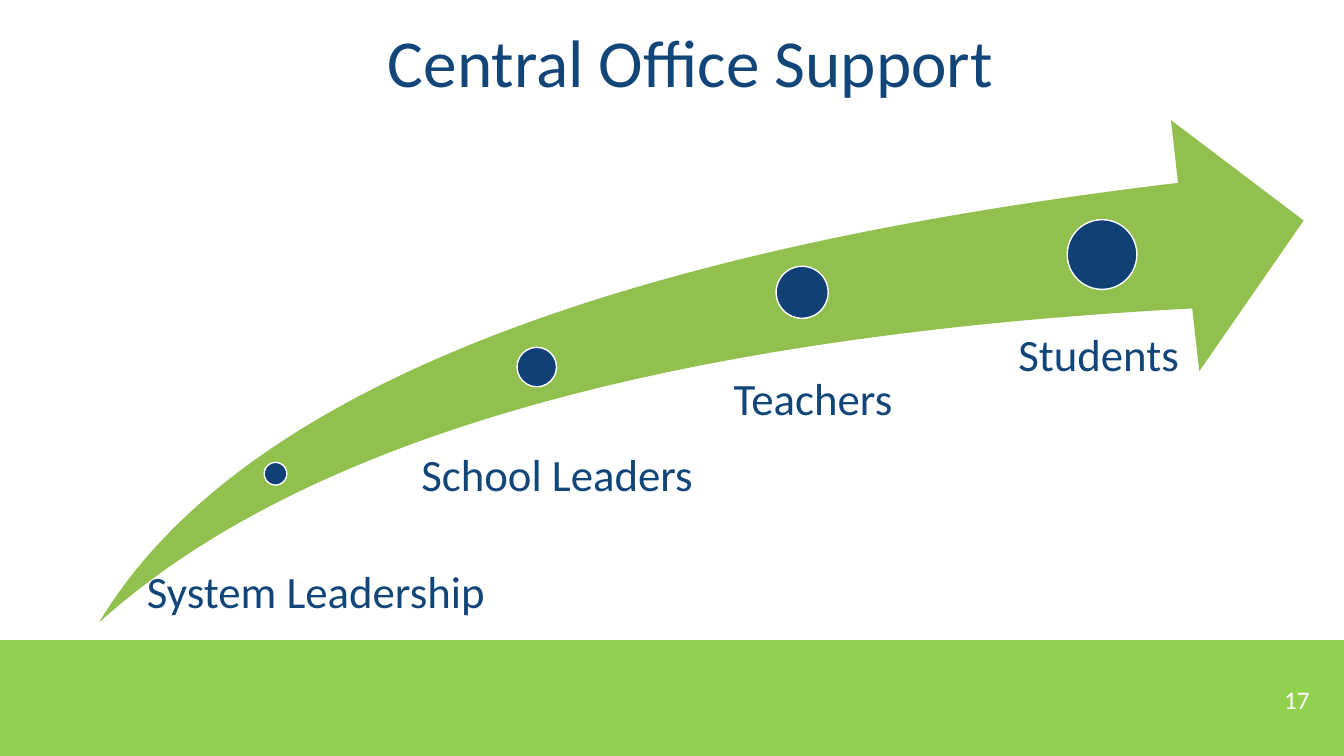
from dataclasses import dataclass

from pptx import Presentation
from pptx.dml.color import RGBColor
from pptx.enum.shapes import MSO_SHAPE
from pptx.enum.text import MSO_ANCHOR, PP_ALIGN
from pptx.util import Inches, Pt

COLUMNS, ROWS = 16, 9


@dataclass(frozen=True)
class Theme:
    font: str = "Calibri"
    band: str = "92D050"
    arrow: str = "92C04F"
    dot: str = "114076"
    ink: str = "124679"
    white: str = "FFFFFF"
    title_size: int = 48
    label_size: int = 32
    number_size: int = 18


def write_text(frame, text, *, font, size, color, align=PP_ALIGN.CENTER,
               anchor=MSO_ANCHOR.TOP, line_spacing=None, margins=None):
    """Fill a text frame with one formatted paragraph."""
    frame.word_wrap = True
    frame.vertical_anchor = anchor
    if margins is not None:
        (frame.margin_left, frame.margin_top,
         frame.margin_right, frame.margin_bottom) = margins
    paragraph = frame.paragraphs[0]
    paragraph.alignment = align
    paragraph.line_spacing = line_spacing
    run = paragraph.add_run()
    run.text = text
    run.font.name = font
    run.font.size = Pt(size)
    run.font.color.rgb = RGBColor.from_string(color)


class SlideBuilder:
    """Places elements by columns and rows of a 16 by 9 grid."""

    def __init__(self, presentation, theme):
        self.theme = theme
        self.slide = presentation.slides.add_slide(presentation.slide_layouts[6])
        self.column = presentation.slide_width / COLUMNS
        self.row = presentation.slide_height / ROWS

    def place(self, left, top, width, height):
        return (round(left * self.column), round(top * self.row),
                round(width * self.column), round(height * self.row))

    def shape(self, kind, box, fill, line=None):
        shape = self.slide.shapes.add_shape(kind, *self.place(*box))
        shape.shadow.inherit = False
        shape.fill.solid()
        shape.fill.fore_color.rgb = RGBColor.from_string(fill)
        if line:
            shape.line.color.rgb = RGBColor.from_string(line)
            shape.line.width = Pt(1)
        else:
            shape.line.fill.background()
        return shape

    def text(self, text, box, **style):
        text_box = self.slide.shapes.add_textbox(*self.place(*box))
        style = {"font": self.theme.font, "color": self.theme.ink, **style}
        write_text(text_box.text_frame, text, **style)

    def milestone(self, name, center, diameter, label_box):
        """A dot on the arrow with its label, inset in step with the dot."""
        x, y = center
        self.shape(MSO_SHAPE.OVAL,
                   (x - diameter / 2, y - diameter / 2, diameter, diameter),
                   self.theme.dot, self.theme.white)
        inset = round(0.53 * diameter * self.column)
        self.text(name, label_box, size=self.theme.label_size,
                  line_spacing=0.9, margins=(inset, 0, 0, 0))


# Name, dot centre, dot diameter, label box
MILESTONES = [
    ("System Leadership", (3.28, 5.64), 0.27, (1.6, 6.78, 4.18, 1.42)),
    ("School Leaders", (6.39, 4.37), 0.47, (4.42, 5.39, 4.18, 0.97)),
    ("Teachers", (9.55, 3.48), 0.62, (7.86, 4.48, 3.31, 0.52)),
    ("Students", (13.12, 3.03), 0.83, (11.35, 3.96, 3.02, 0.85)),
]


def main():
    presentation = Presentation()
    presentation.slide_width = Inches(13.33)
    presentation.slide_height = Inches(7.5)
    theme = Theme()
    builder = SlideBuilder(presentation, theme)

    # Footer band
    builder.shape(MSO_SHAPE.RECTANGLE, (0, 7.62, COLUMNS, ROWS - 7.62), theme.band)

    # Rising arrow
    arrow = builder.shape(MSO_SHAPE.SWOOSH_ARROW, (1.18, 1.43, 14.34, 5.98), theme.arrow)
    arrow.adjustments[0] = arrow.adjustments[1] = 0.25

    # Milestones along the arrow
    for milestone in MILESTONES:
        builder.milestone(*milestone)

    # Title and slide number
    builder.text("Central Office Support", (1.57, 0.13, 13.3, 1.3),
                 size=theme.title_size, anchor=MSO_ANCHOR.MIDDLE, line_spacing=0.9)
    builder.text("17", (12.11, 8.09, 3.6, 0.48), size=theme.number_size,
                 color=theme.white, align=PP_ALIGN.RIGHT, anchor=MSO_ANCHOR.MIDDLE)

    presentation.save("out.pptx")


if __name__ == "__main__":
    main()
